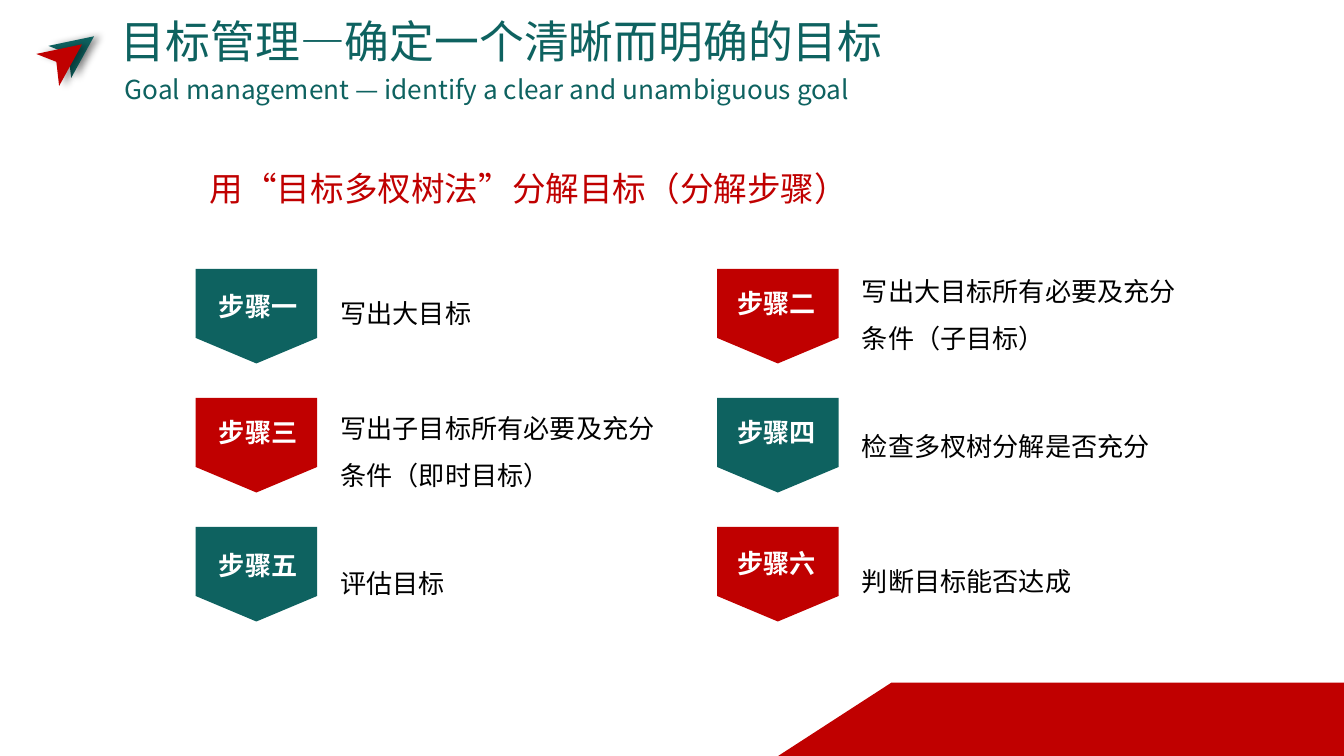
from dataclasses import dataclass

from lxml.etree import SubElement
from pptx import Presentation
from pptx.dml.color import RGBColor
from pptx.enum.shapes import MSO_SHAPE
from pptx.enum.text import MSO_ANCHOR, MSO_AUTO_SIZE, PP_ALIGN
from pptx.oxml.ns import qn
from pptx.util import Inches, Pt

COLORS = {"green": "0E6260", "red": "C00000", "white": "FFFFFF", "black": "000000"}
FONT = "Noto Sans CJK SC"
UNIT = Inches(0.1)
COLUMNS, ROWS = 100, 56.25
STEP_PITCH = (38.8, 9.6)
STEPS = [
    {"label": "步骤一", "note": "写出大目标", "label_top": 1.1, "note_top": 0.45},
    {"label": "步骤二", "note": "写出大目标所有必要及充分条件（子目标）", "label_top": 0.9, "note_top": -1.15},
    {"label": "步骤三", "note": "写出子目标所有必要及充分条件（即时目标）", "label_top": 0.9, "note_top": -0.55},
    {"label": "步骤四", "note": "检查多杈树分解是否充分", "label_top": 0.9, "note_top": 0.75},
    {"label": "步骤五", "note": "评估目标", "label_top": 1.2, "note_top": 1.35},
    {"label": "步骤六", "note": "判断目标能否达成", "label_top": 1.05, "note_top": 1.2},
]


@dataclass
class Box:
    """A region measured in grid columns and rows."""
    left: float
    top: float
    width: float
    height: float

    def inside(self, left, top, width, height):
        """Return a box placed relative to this one."""
        return Box(self.left + left, self.top + top, width, height)

    def emu(self):
        """Return left, top, width and height as lengths."""
        return [round(n * UNIT) for n in (self.left, self.top, self.width, self.height)]


def paint(shape, color):
    """Give a shape a flat fill without line or shadow."""
    shape.shadow.inherit = False
    shape.fill.solid()
    shape.fill.fore_color.rgb = RGBColor.from_string(COLORS[color])
    shape.line.fill.background()


def flip(shape, axis):
    """Mirror a shape along flipH or flipV."""
    shape._element.spPr.find(qn("a:xfrm")).set(axis, "1")


def write(holder, words, size, color, wrap=True, bold=False, **paragraph_format):
    """Fill a text holder with one formatted paragraph."""
    frame = holder.text_frame
    frame_format = {"word_wrap": wrap, "auto_size": MSO_AUTO_SIZE.SHAPE_TO_FIT_TEXT,
                    "vertical_anchor": MSO_ANCHOR.TOP}
    paragraph = frame.paragraphs[0]
    run = paragraph.add_run()
    run.text = words
    font_format = {"size": Pt(size), "name": FONT, "bold": bold}
    for target, values in ((frame, frame_format), (paragraph, paragraph_format),
                           (run.font, font_format)):
        for attribute, value in values.items():
            setattr(target, attribute, value)
    run.font.color.rgb = RGBColor.from_string(COLORS[color])
    SubElement(run._r.get_or_add_rPr(), qn("a:ea"), typeface=FONT)


def add_words(slide, box, words, size, color, **options):
    """Place a text box with formatted words."""
    write(slide.shapes.add_textbox(*box.emu()), words, size, color, **options)


def add_arrow(slide, box, color):
    """Draw one dart with a soft shadow."""
    shares = [(1, 0), (0.5, 1), (0.44, 0.42), (0, 0.23)]
    points = [((box.left + x * box.width) * UNIT, (box.top + y * box.height) * UNIT)
              for x, y in shares]
    builder = slide.shapes.build_freeform(*points[0])
    builder.add_line_segments(points[1:], close=True)
    dart = builder.convert_to_shape()
    paint(dart, color)
    effects = dart._element.spPr.find(qn("a:effectLst"))
    shadow = SubElement(effects, qn("a:outerShdw"), blurRad=str(Pt(4)), dist=str(Pt(3)),
                        dir="0", algn="l", rotWithShape="0")
    tint = SubElement(shadow, qn("a:srgbClr"), val=COLORS["black"])
    SubElement(tint, qn("a:alpha"), val="40000")


def add_header(slide, box):
    """Place the paired darts, the title and its translation."""
    title = slide.shapes.title
    title.left, title.top, title.width, title.height = box.inside(8, 0.55, 59.1, 5).emu()
    write(title, "目标管理—确定一个清晰而明确的目标", 24, "green", alignment=PP_ALIGN.LEFT)
    add_words(slide, box.inside(8.3, 4.95, 58.9, 3.4),
              "Goal management — identify a clear and unambiguous goal", 14, "green", wrap=False)
    add_arrow(slide, box.inside(3.6, 2.7, 3.4, 3.1), "green")
    add_arrow(slide, box.inside(2.7, 3.3, 3.4, 3.1), "red")


def add_badge(slide, box, color):
    """Draw a pennant from a block and a downward point."""
    group = slide.shapes.add_group_shape()
    block_height = 0.73 * box.height
    block = box.inside(0, 0, box.width, block_height)
    point = box.inside(0, block_height, box.width, box.height - block_height)
    paint(group.shapes.add_shape(MSO_SHAPE.RECTANGLE, *block.emu()), color)
    tip = group.shapes.add_shape(MSO_SHAPE.ISOSCELES_TRIANGLE, *point.emu())
    paint(tip, color)
    flip(tip, "flipV")


def add_step(slide, box, step, color, label_left):
    """Place one step: badge, label and note."""
    add_badge(slide, box.inside(0, 0, 9.05, 7.05), color)
    add_words(slide, box.inside(label_left, step["label_top"], 8.1, 3.4),
              step["label"], 14, "white", wrap=False, bold=True)
    note_height = 7.7 if len(step["note"]) > 12 else 4.1
    add_words(slide, box.inside(9.8, step["note_top"], 25.6, note_height),
              step["note"], 14, "black", line_spacing=1.5)


def add_steps(slide, box):
    """Lay the steps out in two columns with alternating colours."""
    width, height = STEP_PITCH
    for index, step in enumerate(STEPS):
        row, column = divmod(index, 2)
        cell = box.inside(column * width, row * height, width, height)
        color = ("green", "red")[(row + column) % 2]
        add_step(slide, cell, step, color, label_left=(0.75, 0.55)[column])


def add_corner(slide, box):
    """Draw the slanted band that fills the box."""
    upright = box.inside((box.width - box.height) / 2, (box.height - box.width) / 2,
                         box.height, box.width)
    band = slide.shapes.add_shape(MSO_SHAPE.FLOWCHART_MANUAL_INPUT, *upright.emu())
    paint(band, "red")
    band.rotation = 270
    flip(band, "flipH")


def main():
    """Build the goal breakdown slide."""
    deck = Presentation()
    deck.slide_width, deck.slide_height = COLUMNS * UNIT, round(ROWS * UNIT)
    slide = deck.slides.add_slide(deck.slide_layouts[5])
    add_header(slide, Box(0, 0, COLUMNS, 10))
    add_words(slide, Box(9.8, 12, 59.1, 4), "用“目标多杈树法”分解目标（分解步骤）",
              18, "red", alignment=PP_ALIGN.CENTER)
    add_steps(slide, Box(14.55, 20, 77.6, 28.8))
    add_corner(slide, Box(57.9, 50.8, 42.1, 5.45))
    deck.save("out.pptx")


if __name__ == "__main__":
    main()
